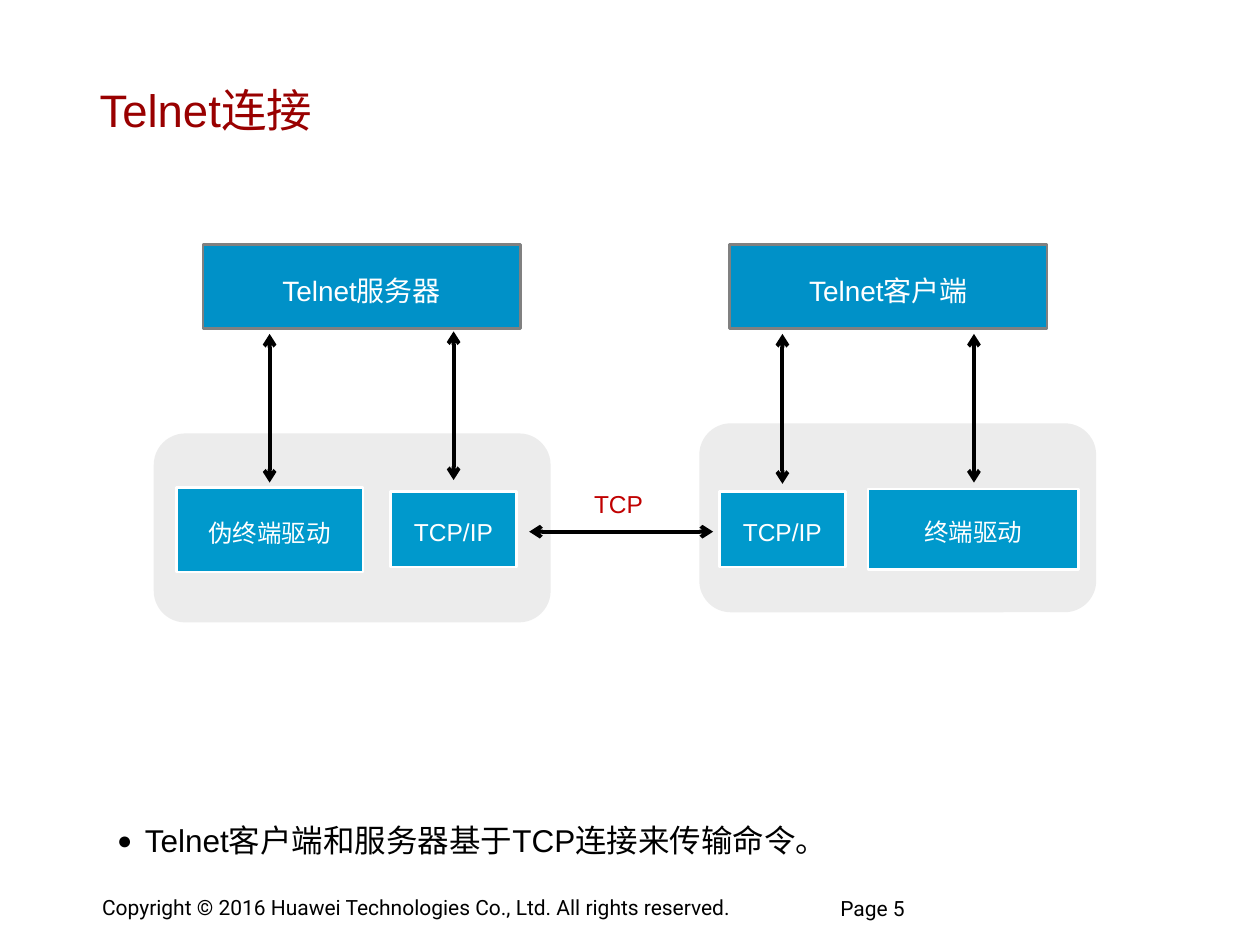
"""Build a slide showing how a Telnet server and client connect over TCP."""
from lxml.etree import SubElement
from pptx import Presentation
from pptx.dml.color import RGBColor
from pptx.enum.shapes import MSO_CONNECTOR, MSO_SHAPE
from pptx.enum.text import MSO_ANCHOR, MSO_AUTO_SIZE, PP_ALIGN
from pptx.oxml.ns import qn
from pptx.util import Inches, Pt

COL = ROW = Inches(0.1)
CJK = "Noto Sans CJK SC"


def paint(fill, color):
    fill.solid()
    fill.fore_color.rgb = RGBColor.from_string(color)


def write(sp, text, size=14, color="FFFFFF", font="Arial", align=PP_ALIGN.CENTER,
          spacing=1.0, anchor=MSO_ANCHOR.MIDDLE, insets=(0.1, 0.05), wrap=True,
          grow=False, bullet=None):
    tf = sp.text_frame
    tf.word_wrap, tf.vertical_anchor = wrap, anchor
    tf.auto_size = MSO_AUTO_SIZE.SHAPE_TO_FIT_TEXT if grow else MSO_AUTO_SIZE.NONE
    tf.margin_left = tf.margin_right = Inches(insets[0])
    tf.margin_top = tf.margin_bottom = Inches(insets[1])
    p = tf.paragraphs[0]
    p.alignment, p.line_spacing, p.space_before = align, spacing, Pt(0)
    if bullet:
        pPr = p._p.get_or_add_pPr()
        pPr.set("marL", str(Inches(0.22)))
        pPr.set("indent", str(-Inches(0.22)))
        SubElement(pPr, qn("a:buSzPct"), val="80000")
        SubElement(pPr, qn("a:buFont"), typeface="Arial")
        SubElement(pPr, qn("a:buChar"), char=bullet)
    r = p.add_run()
    r.text = text
    r.font.size, r.font.name, r.font.bold = Pt(size), font, False
    paint(r.font.fill, color)
    SubElement(r._r.get_or_add_rPr(), qn("a:ea"), typeface=CJK)


prs = Presentation()
prs.slide_width, prs.slide_height = 100 * COL, 75 * ROW
s = prs.slides.add_slide(prs.slide_layouts[1])

title, body = s.placeholders
for sp, (x, y, w, h) in ((title, (7, 3.9, 84.5, 9.5)), (body, (8.3, 63.5, 83.4, 5.5))):
    sp.left, sp.top = int(x * COL), int(y * ROW)
    sp.width, sp.height = int(w * COL), int(h * ROW)
write(title, "Telnet连接", size=26, color="990000", align=PP_ALIGN.LEFT, insets=(0.09, 0.04))
write(body, "Telnet客户端和服务器基于TCP连接来传输命令。", size=18, color="000000",
      align=PP_ALIGN.LEFT, spacing=1.4, anchor=MSO_ANCHOR.TOP, bullet="●")

for x, y in ((55.5, 33.6), (12.2, 34.4)):
    sp = s.shapes.add_shape(MSO_SHAPE.ROUNDED_RECTANGLE, int(x * COL), int(y * ROW),
                            int(31.5 * COL), 15 * ROW)
    sp.shadow.inherit = False
    paint(sp.fill, "D9D9D9")
    sp.line.fill.background()
    SubElement(sp.fill._xPr.find(".//" + qn("a:srgbClr")), qn("a:alpha"), val="49000")

boxes = (
    ("Telnet服务器", 16.1, 19.4, 25.2, 6.7, "0091C8", "808080", 16, "Arial"),
    ("Telnet客户端", 57.9, 19.4, 25.2, 6.7, "0091C8", "808080", 16, "Arial"),
    ("伪终端驱动", 14, 38.7, 14.8, 6.7, "0099CC", "FFFFFF", 14, CJK),
    ("TCP/IP", 31, 39, 10, 6, "0099CC", "FFFFFF", 14, "Arial"),
    ("TCP/IP", 57.1, 39, 10, 6, "0099CC", "FFFFFF", 14, "Arial"),
    ("终端驱动", 68.9, 38.8, 16.7, 6.4, "0099CC", "FFFFFF", 14, CJK),
)
for text, x, y, w, h, fill, line, size, font in boxes:
    sp = s.shapes.add_shape(MSO_SHAPE.RECTANGLE, int(x * COL), int(y * ROW),
                            int(w * COL), int(h * ROW))
    sp.shadow.inherit = False
    paint(sp.fill, fill)
    paint(sp.line.fill, line)
    sp.line.width = Pt(1.5)
    write(sp, text, size=size, font=font, spacing=1.2, wrap=False)

arrows = (
    (21.4, 26.5, 21.4, 38.3),
    (36, 26.3, 36, 38.1),
    (62.1, 26.5, 62.1, 38.4),
    (77.3, 26.5, 77.3, 38.3),
    (42, 42.2, 56.6, 42.2),
)
for x1, y1, x2, y2 in arrows:
    sp = s.shapes.add_connector(MSO_CONNECTOR.STRAIGHT, int(x1 * COL), int(y1 * ROW),
                                int(x2 * COL), int(y2 * ROW))
    paint(sp.line.fill, "000000")
    sp.line.width = Pt(2.25)
    for end in ("a:headEnd", "a:tailEnd"):
        SubElement(sp.line._get_or_add_ln(), qn(end), type="arrow")
    SubElement(sp._element.spPr, qn("a:effectLst"))

footer = dict(size=12, color="000000", font="Roboto", align=PP_ALIGN.LEFT,
              anchor=MSO_ANCHOR.TOP)
labels = (
    ("TCP", 46.1, 38.3, 6, 3.4,
     dict(color="C00000", anchor=MSO_ANCHOR.TOP, wrap=False, grow=True)),
    ("Copyright © 2016 Huawei Technologies Co., Ltd. All rights reserved.",
     7.2, 70.6, 54.9, 2.9, dict(footer, insets=(0.09, 0.04), wrap=False, grow=True)),
    ("Page 5", 66.7, 71.4, 16.6, 3.6, dict(footer, insets=(0, 0), spacing=0.85)),
)
for text, x, y, w, h, style in labels:
    sp = s.shapes.add_textbox(int(x * COL), int(y * ROW), int(w * COL), int(h * ROW))
    write(sp, text, **style)

prs.save("out.pptx")
